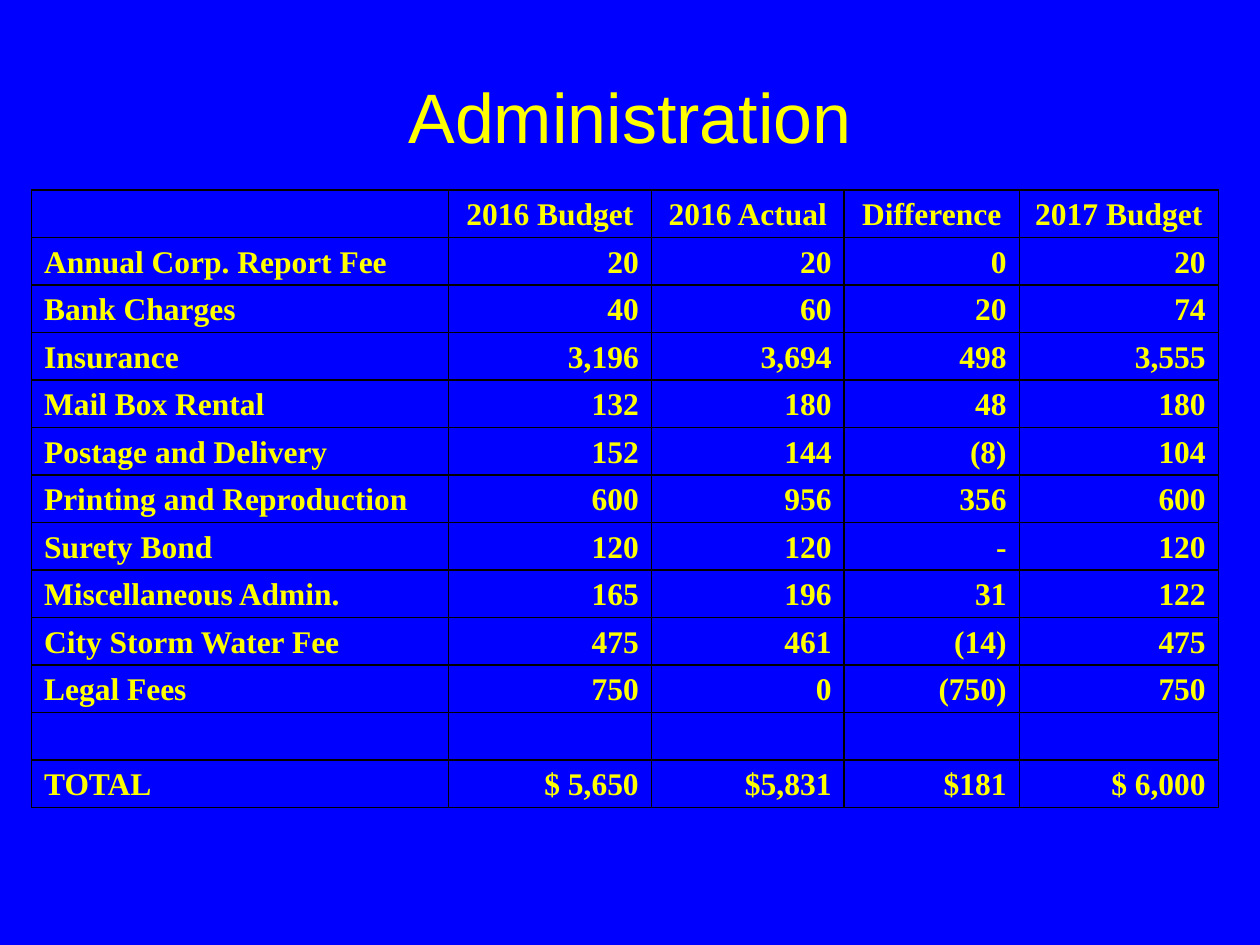
from dataclasses import dataclass

from lxml.etree import SubElement
from pptx import Presentation
from pptx.dml.color import RGBColor
from pptx.enum.text import MSO_ANCHOR as Anchor, PP_ALIGN as Align
from pptx.oxml.ns import qn
from pptx.util import Inches, Pt


@dataclass(frozen=True)
class Theme:
    background: str = "0000FF"
    text: str = "FFFF00"
    border: str = "000000"
    title_font: str = "Arial"
    table_font: str = "Times New Roman"
    title_size: int = 40
    table_size: int = 18
    border_width: int = 1


@dataclass(frozen=True)
class BudgetLine:
    label: str
    budget_2016: str
    actual_2016: str
    difference: str
    budget_2017: str

    def values(self) -> tuple[str, ...]:
        return (self.label, self.budget_2016, self.actual_2016,
                self.difference, self.budget_2017)


THEME = Theme()
LINES = [
    BudgetLine("", "2016 Budget", "2016 Actual", "Difference", "2017 Budget"),
    BudgetLine("Annual Corp. Report Fee", "20", "20", "0", "20"),
    BudgetLine("Bank Charges", "40", "60", "20", "74"),
    BudgetLine("Insurance", "3,196", "3,694", "498", "3,555"),
    BudgetLine("Mail Box Rental", "132", "180", "48", "180"),
    BudgetLine("Postage and Delivery", "152", "144", "(8)", "104"),
    BudgetLine("Printing and Reproduction", "600", "956", "356", "600"),
    BudgetLine("Surety Bond", "120", "120", "-", "120"),
    BudgetLine("Miscellaneous Admin.", "165", "196", "31", "122"),
    BudgetLine("City Storm Water Fee", "475", "461", "(14)", "475"),
    BudgetLine("Legal Fees", "750", "0", "(750)", "750"),
    BudgetLine("", "", "", "", ""),
    BudgetLine("TOTAL", "$ 5,650", "$5,831", "$181", "$ 6,000"),
]
COLUMN_WIDTHS = [3.31, 1.61, 1.53, 1.39, 1.58]
TABLE_HEIGHT = 4.9
HANGING_INDENT = 0.38


def set_format(obj, values: dict) -> None:
    for name, value in values.items():
        setattr(obj, name, value)


def add_text(p, text: str, font: str, size: int, bold: bool, align: Align) -> None:
    p.alignment = align
    r = p.add_run()
    r.text = text
    set_format(r.font, {"name": font, "size": Pt(size), "bold": bold})
    r.font.color.rgb = RGBColor.from_string(THEME.text)


def add_title(s, text: str) -> None:
    sp = s.shapes.add_textbox(Inches(0.75), Inches(0.5), Inches(8.5), Inches(0.83))
    tf = sp.text_frame
    set_format(tf, {"word_wrap": True, "vertical_anchor": Anchor.MIDDLE})
    add_text(tf.paragraphs[0], text, THEME.title_font, THEME.title_size, False, Align.CENTER)


def add_borders(cell) -> None:
    tc_pr = cell._tc.get_or_add_tcPr()
    for side in ("lnL", "lnR", "lnT", "lnB"):
        ln = SubElement(tc_pr, qn(f"a:{side}"), w=str(Pt(THEME.border_width)))
        fill = SubElement(ln, qn("a:solidFill"))
        SubElement(fill, qn("a:srgbClr"), val=THEME.border)


def fill_cell(cell, text: str, align: Align) -> None:
    add_borders(cell)
    cell.fill.solid()
    cell.fill.fore_color.rgb = RGBColor.from_string(THEME.background)
    set_format(cell, {"vertical_anchor": Anchor.BOTTOM,
                      "margin_top": 0, "margin_bottom": Inches(0.04)})
    if text:
        p = cell.text_frame.paragraphs[0]
        add_text(p, text, THEME.table_font, THEME.table_size, True, align)
        indent = Inches(HANGING_INDENT)
        p_pr = p._p.get_or_add_pPr()
        p_pr.set("marL", str(indent))
        p_pr.set("indent", str(-indent))


def cell_alignment(row: int, column: int) -> Align:
    if row == 0:
        return Align.CENTER
    return Align.LEFT if column == 0 else Align.RIGHT


def add_budget_table(s, lines: list[BudgetLine]) -> None:
    frame = s.shapes.add_table(len(lines), len(COLUMN_WIDTHS), Inches(0.25), Inches(1.51),
                               Inches(sum(COLUMN_WIDTHS)), Inches(TABLE_HEIGHT))
    table = frame.table
    set_format(table, {"first_row": False, "horz_banding": False})
    for column, width in zip(table.columns, COLUMN_WIDTHS):
        column.width = Inches(width)
    for i, line in enumerate(lines):
        table.rows[i].height = Inches(TABLE_HEIGHT / len(lines))
        for j, text in enumerate(line.values()):
            fill_cell(table.cell(i, j), text, cell_alignment(i, j))


def main() -> None:
    prs = Presentation()
    set_format(prs, {"slide_width": Inches(10), "slide_height": Inches(7.5)})
    s = prs.slides.add_slide(prs.slide_layouts[6])
    s.background.fill.solid()
    s.background.fill.fore_color.rgb = RGBColor.from_string(THEME.background)
    add_title(s, "Administration")
    add_budget_table(s, LINES)
    prs.save("out.pptx")


if __name__ == "__main__":
    main()
